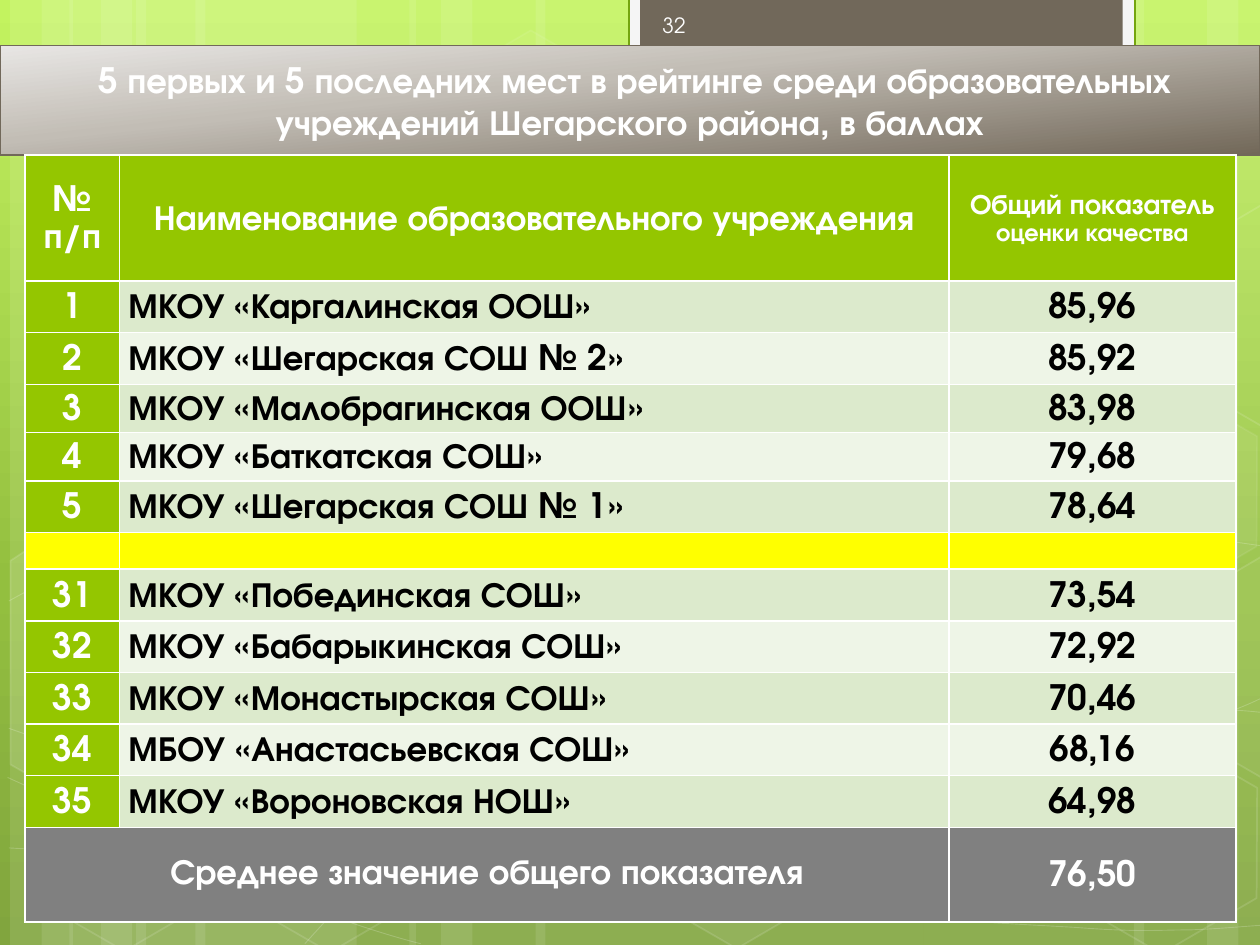
from copy import deepcopy
from dataclasses import dataclass

from lxml import etree
from pptx import Presentation
from pptx.dml.color import RGBColor
from pptx.enum.shapes import MSO_SHAPE as Preset
from pptx.enum.text import MSO_ANCHOR as Anchor, PP_ALIGN as Align
from pptx.oxml.ns import qn
from pptx.util import Inches, Pt

rgb = RGBColor.from_string


@dataclass(frozen=True)
class Theme:
    font: str = "TeX Gyre Adventor"
    white: RGBColor = rgb("FFFFFF")
    black: RGBColor = rgb("000000")
    green: RGBColor = rgb("94C600")
    tab_edge: RGBColor = rgb("74A510")
    tab_back: RGBColor = rgb("F5F5F5")
    brown: RGBColor = rgb("71685A")
    number: RGBColor = rgb("FEFEFE")
    bands: tuple = (rgb("DCEACC"), rgb("EEF5E7"))
    yellow: RGBColor = rgb("FFFF00")
    grey: RGBColor = rgb("808080")
    backdrop: tuple = ((0, "C3F35F"), (0.62, "93BF3F"), (1, "81A53E"))
    banner: tuple = ((0, "E8E6E4"), (0.4, "C2BDB5"), (1, "726859"))
    main_size: Pt = Pt(20)
    label_size: Pt = Pt(16)
    small_size: Pt = Pt(14)
    number_size: Pt = Pt(12)


theme = Theme()


def set_gradient(fill, stops, clockwise):
    fill.gradient()
    fill.gradient_angle = 360 - clockwise
    first = fill.gradient_stops[0]._gs
    first.addnext(deepcopy(first))
    for stop, (position, color) in zip(fill.gradient_stops, stops):
        stop.position = position
        stop.color.rgb = rgb(color)


def make_glass(shape, fill_percent=0, line_percent=0, width=1):
    """Give a shape a see-through white fill and line; 0 leaves one out."""
    shape.shadow.inherit = False
    for paint, percent in ((shape.fill, fill_percent), (shape.line.fill, line_percent)):
        if not percent:
            paint.background()
            continue
        paint.solid()
        paint.fore_color.rgb = theme.white
    if line_percent:
        shape.line.width = Pt(width)
    percents = [p for p in (fill_percent, line_percent) if p]
    for color, percent in zip(shape._element.spPr.iter(qn("a:srgbClr")), percents):
        etree.SubElement(color, qn("a:alpha"), val=str(percent * 1000))


deck = Presentation()
deck.slide_width, deck.slide_height = Inches(10), Inches(7.5)
slide = deck.slides.add_slide(deck.slide_layouts[6])
shapes = slide.shapes
set_gradient(slide.background.fill, theme.backdrop, 90)

# Backdrop: stripes, curves and hexagons
stripes = [(1.08, 1.75), (0.08, 0.5), (0.33, 0.83), (1.55, 1.75), (0.55, 0.5), (0.8, 0.83),
           (7.33, 1.75), (9.58, 0.5), (9, 0.83), (4.25, 3.08), (3.25, 0.5), (3.5, 0.83)]
for left, width in stripes:
    stripe = shapes.add_shape(Preset.RECTANGLE, Inches(left), 0, Inches(width), Inches(7.5))
    make_glass(stripe, 10)

# Each curve is a start point, then two control points and an end point per bend
curves = [
    [(0.07, 6.73), (0.61, 6.76), (1.15, 6.79), (1.9, 6.78), (2.65, 6.77), (3.58, 6.75), (4.58, 6.65),
     (5.58, 6.55), (7, 6.36), (7.92, 6.17), (8.83, 5.98), (9.77, 5.68), (10.07, 5.51)],
    [(0.07, 4.77), (0.36, 4.61), (0.65, 4.46), (1.21, 4.31), (1.78, 4.16), (2.59, 3.94), (3.47, 3.87),
     (4.36, 3.8), (5.44, 3.79), (6.54, 3.87), (7.64, 3.95), (9.47, 4.26), (10.07, 4.34)],
    [(0.06, 6.17), (1.27, 6.72), (2.47, 7.27), (3.34, 7.49)],
    [(0.07, 5.78), (0.38, 5.89), (0.7, 6), (1.28, 6.16), (1.86, 6.31), (2.73, 6.56), (3.57, 6.73),
     (4.4, 6.9), (5.45, 7.08), (6.28, 7.18), (7.11, 7.29), (8, 7.33), (8.53, 7.36),
     (9.05, 7.4), (9.19, 7.38), (9.45, 7.38), (9.71, 7.37), (9.89, 7.35), (10.07, 7.34)],
    [(2.42, 7.49), (2.6, 7.29), (2.78, 7.09), (3.02, 6.91), (3.26, 6.73), (3.6, 6.53), (3.88, 6.39),
     (4.16, 6.25), (4.33, 6.19), (4.7, 6.09), (5.06, 5.99), (5.73, 5.85), (6.08, 5.78),
     (6.44, 5.71), (6.49, 5.71), (6.8, 5.69), (7.11, 5.66), (7.6, 5.63), (7.94, 5.62),
     (8.29, 5.61), (8.86, 5.62), (8.86, 5.62), (9.08, 5.62), (9.31, 5.62), (9.53, 5.62),
     (9.71, 5.63), (9.88, 5.64), (9.97, 5.65), (10.06, 5.66), (10.03, 5.65), (10.06, 5.66)],
]
for knots in curves:
    knots = [(Inches(x), Inches(y)) for x, y in knots]
    builder = shapes.build_freeform(*knots[0])
    builder.add_line_segments(knots[1:], close=False)
    curve = builder.convert_to_shape()
    segments = list(curve._element.spPr.iter(qn("a:lnTo")))
    for i in range(0, len(segments), 3):
        bend = etree.Element(qn("a:cubicBezTo"))
        segments[i].addprevious(bend)
        for segment in segments[i:i + 3]:
            bend.append(segment[0])
            segment.getparent().remove(segment)
    make_glass(curve, 0, 20, 0.5)

hexagons = [(3.34, 0.36, 4, 8), (4.97, 5.89, 6, 12), (0.11, 5.91, 0, 12), (0.14, 3.12, 7, 8),
            (1.74, 5.92, 0, 12), (7.53, 4.53, 10, 12), (8.34, 5.93, 0, 12), (8.34, 3.14, 7, 8)]
for left, top, fill_percent, line_percent in hexagons:
    hexagon = shapes.add_shape(Preset.HEXAGON, Inches(left), Inches(top), Inches(1.75), Inches(1.52))
    hexagon.rotation = 30
    hexagon.adjustments[0], hexagon.adjustments[1] = 0.285, 1.155
    make_glass(hexagon, fill_percent, line_percent)

left_cut = [(-0.33, 4.71), (-0.27, 4.59), (0.61, 4.59), (1.05, 5.35), (0.62, 6.11), (0.48, 6.11)]
right_cut = [(9.17, 5.2), (9.6, 4.44), (9.69, 4.44), (10.53, 5.89), (10.48, 5.96), (9.6, 5.96)]
for corners, rise, fill_percent in ((left_cut, 0, 10), (right_cut, 0, 4), (right_cut, 2.79, 0)):
    corners = [(Inches(x), Inches(y - rise)) for x, y in corners]
    builder = shapes.build_freeform(*corners[0])
    builder.add_line_segments(corners[1:], close=True)
    cut_hexagon = builder.convert_to_shape()
    cut_hexagon.rotation = 30
    make_glass(cut_hexagon, fill_percent, 12)

# Panel, page tab, title banner and page number
panel = shapes.add_shape(Preset.RECTANGLE, Inches(0.5), Inches(0.36), Inches(9), Inches(6.76))
tab_frame = shapes.add_shape(Preset.RECTANGLE, Inches(4.99), Inches(-0.02), Inches(4.02), Inches(0.76))
tab = shapes.add_shape(Preset.RECTANGLE, Inches(5.08), Inches(-0.02), Inches(3.83), Inches(0.68))
banner = shapes.add_shape(Preset.RECTANGLE, 0, Inches(0.36), Inches(10), Inches(0.87))
for part, color, edge, width in (
        (panel, theme.white, theme.black, 0.5), (tab_frame, theme.tab_back, theme.tab_edge, 1.25),
        (tab, theme.brown, None, 0), (banner, None, theme.brown, 0.75)):
    part.shadow.inherit = False
    if color is None:
        set_gradient(part.fill, theme.banner, 84)
    else:
        part.fill.solid()
        part.fill.fore_color.rgb = color
    if edge is None:
        part.line.fill.background()
    else:
        part.line.color.rgb = edge
        part.line.width = Pt(width)
banner.text_frame.text = (" 5 первых и 5 последних мест в рейтинге среди образовательных "
                          "учреждений Шегарского района, в баллах")
page_number = shapes.add_textbox(Inches(5.16), 0, Inches(1.46), Inches(0.4))
page_number.text_frame.text = "32"
for part, align, size, color, bold in (
        (banner, Align.CENTER, theme.main_size, theme.white, True),
        (page_number, Align.LEFT, theme.number_size, theme.number, False)):
    part.text_frame.word_wrap = True
    part.text_frame.vertical_anchor = Anchor.MIDDLE
    paragraph = part.text_frame.paragraphs[0]
    paragraph.alignment = align
    font = paragraph.font
    font.name, font.size, font.bold, font.color.rgb = theme.font, size, bold, color

# Rating table
header = ("№ п/п", "Наименование образовательного учреждения", "Общий показатель ")
leaders = [("1", "МКОУ «Каргалинская ООШ»", "85,96"), ("2", "МКОУ «Шегарская СОШ № 2»", "85,92"),
           ("3", "МКОУ «Малобрагинская ООШ»", "83,98"), ("4", "МКОУ «Баткатская СОШ»", "79,68"),
           ("5", "МКОУ «Шегарская СОШ № 1»", "78,64")]
trailers = [("31", "МКОУ «Побединская СОШ»", "73,54"), ("32", "МКОУ «Бабарыкинская СОШ»", "72,92"),
            ("33", "МКОУ «Монастырская СОШ»", "70,46"), ("34", "МБОУ «Анастасьевская СОШ»", "68,16"),
            ("35", "МКОУ «Вороновская НОШ»", "64,98")]
average = ("Среднее значение общего показателя", "", "76,50")
rows = [header, *leaders, ("", "", ""), *trailers, average]
gap_row, last_row = len(leaders) + 1, len(rows) - 1
row_heights = [1, 0.41, 0.41, 0.3, 0.34, 0.41, 0.29] + [0.41] * len(trailers) + [0.75]

rating = shapes.add_table(len(rows), 3, Inches(0.2), Inches(1.23), Inches(9.61), Inches(6.03)).table
rating.horz_banding = False
for column, width in zip(rating.columns, (0.75, 6.58, 2.28)):
    column.width = Inches(width)
for row, height in zip(rating.rows, row_heights):
    row.height = Inches(height)

for r, values in enumerate(rows):
    for c, value in enumerate(values):
        cell = rating.cell(r, c)
        cell.margin_left = cell.margin_right = Inches(0.07)
        cell.margin_top = cell.margin_bottom = 0
        cell.vertical_anchor = Anchor.MIDDLE
        in_body = 0 < r < last_row and c > 0
        if r == gap_row:
            background = theme.yellow
        elif r == last_row:
            background = theme.grey
        else:
            background = theme.bands[(r - 1) % 2] if in_body else theme.green
        cell.fill.solid()
        cell.fill.fore_color.rgb = background
        paragraph = cell.text_frame.paragraphs[0]
        if not value:
            etree.SubElement(paragraph._p, qn("a:endParaRPr"), sz="1400")
            continue
        paragraph.add_run().text = value
        paragraph.alignment = Align.LEFT if in_body and c == 1 else Align.CENTER
        if (r, c) != (last_row, 0):
            paragraph.line_spacing = 1.15
        font = paragraph.font
        font.name, font.size, font.bold = theme.font, theme.main_size, True
        font.color.rgb = theme.black if in_body else theme.white

score_label = rating.cell(0, 2).text_frame.paragraphs[0]
score_label.add_run().text = "оценки качества"
for run, size in zip(score_label.runs, (theme.label_size, theme.small_size)):
    run.font.size = size
rating.cell(last_row, 0).merge(rating.cell(last_row, 1))

deck.save("out.pptx")
